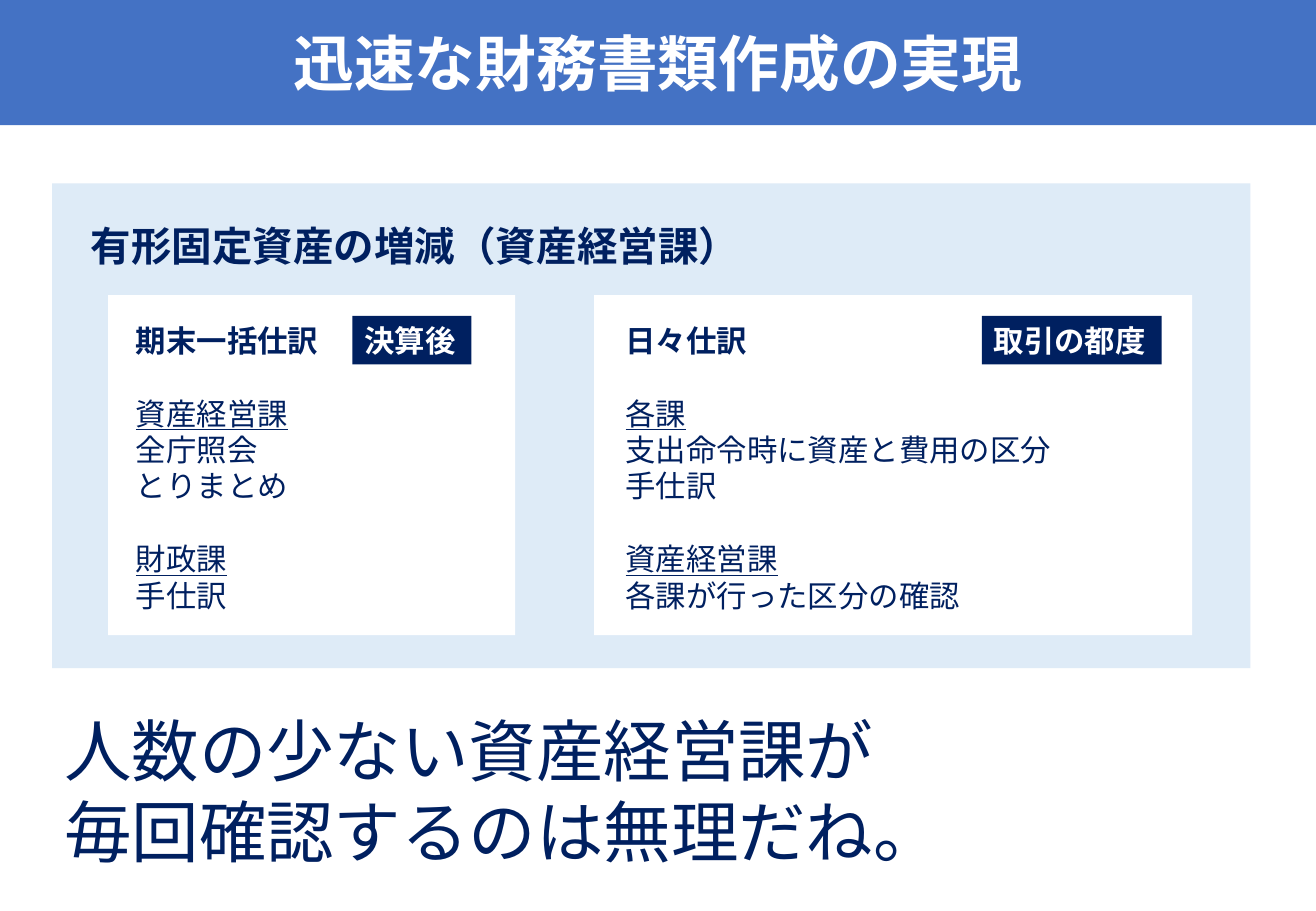
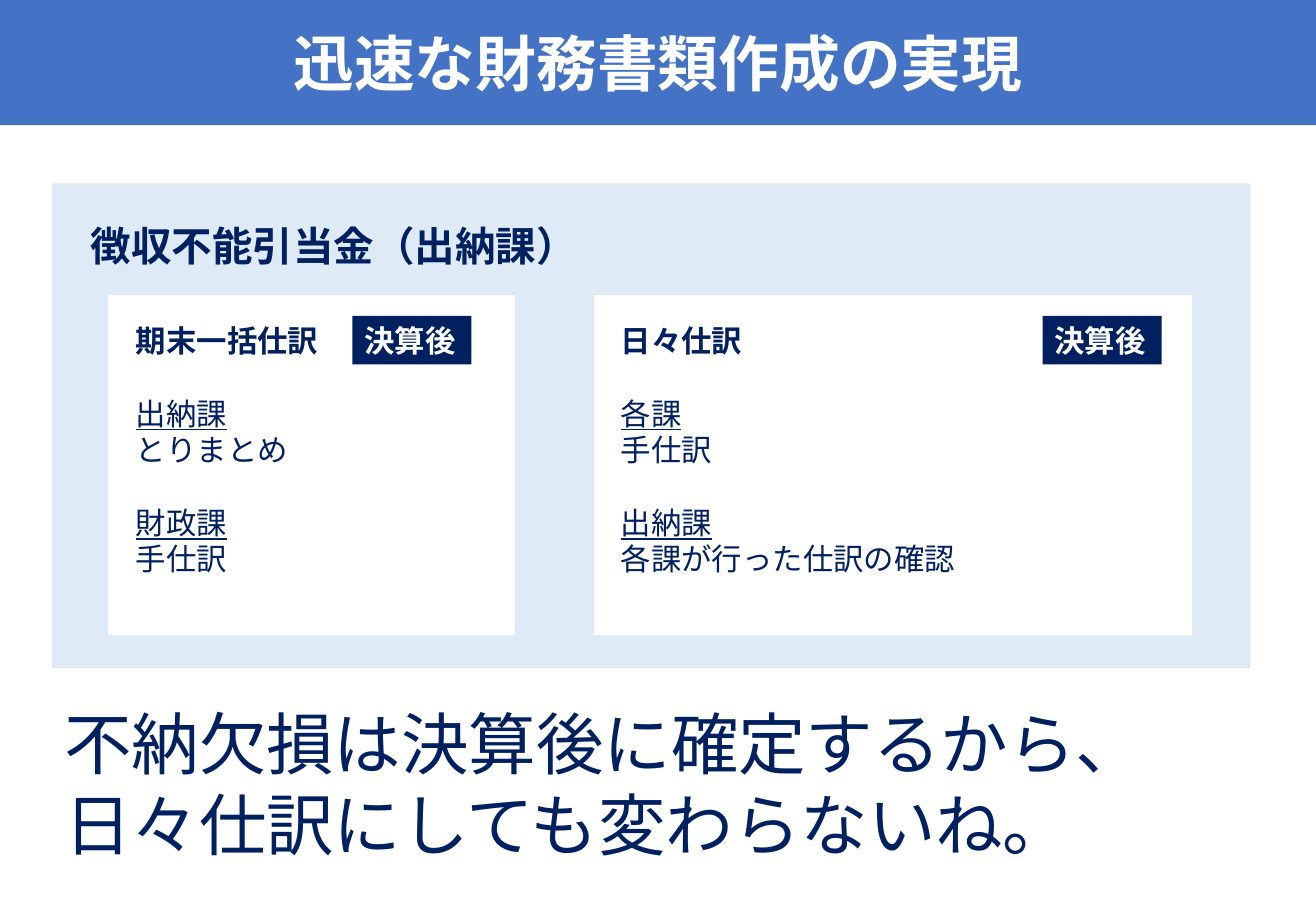
from dataclasses import dataclass

import pptx
import pptx.dml.color
import pptx.enum.lang
import pptx.enum.shapes
import pptx.enum.text
import pptx.util

Inches = pptx.util.Inches
Align = pptx.enum.text.PP_ALIGN
Anchor = pptx.enum.text.MSO_ANCHOR

HUES = {"band": "4472C4", "panel": "DEEBF7", "navy": "002060", "white": "FFFFFF"}
WIDE, HIGH = 10.83, 7.5
TITLE = "迅速な財務書類作成の実現"
BASE = {"name": "Calibri", "language_id": pptx.enum.lang.MSO_LANGUAGE_ID.JAPANESE}
TOP = 2.6


@dataclass
class Line:
    text: str
    size: float = 18
    bold: bool = False
    under: bool = False
    hue: str = "navy"
    gap: float = 0


@dataclass
class Group:
    name: str
    tasks: list[str]


@dataclass
class Card:
    left: float
    width: float
    inset: float
    span: float
    edge: float
    head: str
    badge: str
    groups: list[Group]


@dataclass
class Page:
    head: str
    cards: list[Card]
    note: str
    place: tuple[float, float, float, float]


def tint(name: str) -> pptx.dml.color.RGBColor:
    return pptx.dml.color.RGBColor.from_string(HUES[name])


def write(shape, lines: list[Line], align=Align.LEFT, anchor=Anchor.TOP) -> None:
    frame = shape.text_frame
    frame.word_wrap = True
    frame.vertical_anchor = anchor
    for spot, line in enumerate(lines):
        para = frame.add_paragraph() if spot else frame.paragraphs[0]
        para.alignment = align
        if line.gap:
            para.space_before = pptx.util.Pt(line.gap)
        run = para.add_run()
        run.text = line.text
        style = BASE | {
            "size": pptx.util.Pt(line.size),
            "bold": line.bold,
            "underline": line.under,
        }
        for key, value in style.items():
            setattr(run.font, key, value)
        run.font.color.rgb = tint(line.hue)


def block(slide, left: float, top: float, width: float, height: float, hue: str):
    kind = pptx.enum.shapes.MSO_SHAPE.RECTANGLE
    shape = slide.shapes.add_shape(
        kind, Inches(left), Inches(top), Inches(width), Inches(height))
    shape.shadow.inherit = False
    shape.fill.solid()
    shape.fill.fore_color.rgb = tint(hue)
    shape.line.fill.background()
    return shape


def label(slide, left: float, top: float, width: float, height: float,
          lines: list[Line]) -> None:
    box = slide.shapes.add_textbox(
        Inches(left), Inches(top), Inches(width), Inches(height))
    write(box, lines)


def draw_card(slide, card: Card) -> None:
    block(slide, card.left, 2.43, card.width, 2.8, "white")
    lines = [Line(card.head, bold=True)]
    for group in card.groups:
        lines.append(Line(group.name, under=True, gap=21.6))
        lines += [Line(task) for task in group.tasks]
    label(slide, card.left + card.inset, TOP, card.span, 2.52, lines)
    width = 0.23 + 0.25 * len(card.badge)
    badge = block(slide, card.edge - width, TOP, width, 0.4, "navy")
    write(badge, [Line(card.badge, bold=True, hue="white")])


def draw_page(deck, page: Page) -> None:
    slide = deck.slides.add_slide(deck.slide_layouts[6])
    band = block(slide, 0, 0, WIDE, 1.03, "band")
    write(band, [Line(TITLE, 36, True, hue="white")], Align.CENTER, Anchor.MIDDLE)
    block(slide, 0.43, 1.51, 9.86, 3.99, "panel")
    label(slide, 0.65, 1.77, 9.08, 0.5, [Line(page.head, 24, True)])
    for card in page.cards:
        draw_card(slide, card)
    label(slide, *page.place, [Line(page.note, 40)])


def batch(groups: list[Group]) -> Card:
    return Card(0.89, 3.35, 0.13, 1.98, 3.88, "期末一括仕訳", "決算後", groups)


def daily(inset: float, badge: str, groups: list[Group]) -> Card:
    return Card(4.89, 4.92, inset, 4.42, 9.56, "日々仕訳", badge, groups)


PAGES = [
    Page(
        "有形固定資産の増減（資産経営課）",
        [
            batch([Group("資産経営課", ["全庁照会", "とりまとめ"]),
                   Group("財政課", ["手仕訳"])]),
            daily(0.16, "取引の都度",
                  [Group("各課", ["支出命令時に資産と費用の区分", "手仕訳"]),
                   Group("資産経営課", ["各課が行った区分の確認"])]),
        ],
        "人数の少ない資産経営課が毎回確認するのは無理だね。",
        (0.43, 5.79, 7.32, 1.45),
    ),
    Page(
        "徴収不能引当金（出納課）",
        [
            batch([Group("出納課", ["とりまとめ"]), Group("財政課", ["手仕訳"])]),
            daily(0.12, "決算後",
                  [Group("各課", ["手仕訳"]),
                   Group("出納課", ["各課が行った仕訳の確認"])]),
        ],
        "不納欠損は決算後に確定するから、日々仕訳にしても変わらないね。",
        (0.43, 5.73, 9.58, 1.45),
    ),
]


def main() -> None:
    deck = pptx.Presentation()
    deck.slide_width = Inches(WIDE)
    deck.slide_height = Inches(HIGH)
    for page in PAGES:
        draw_page(deck, page)
    deck.save("out.pptx")


if __name__ == "__main__":
    main()
